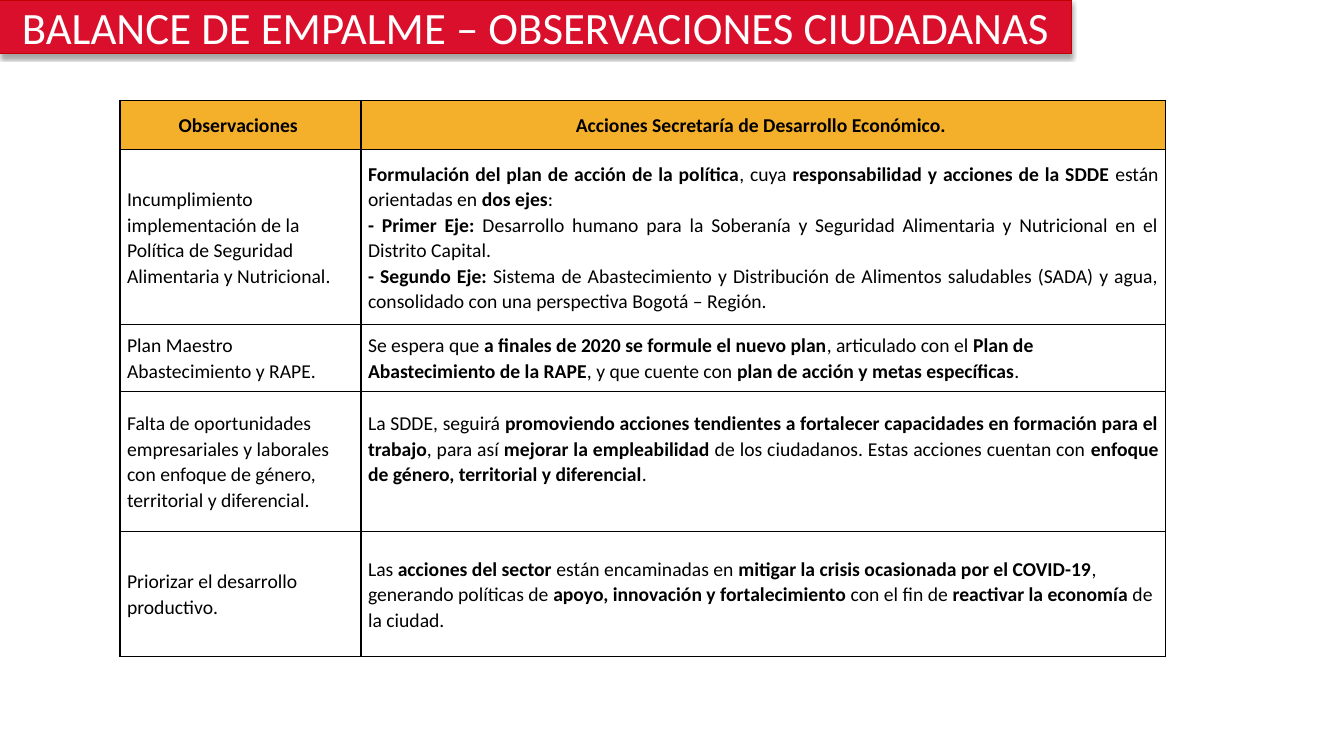
import pptx
import pptx.dml.color
import pptx.enum.shapes
import pptx.enum.text
import pptx.oxml
import pptx.util
from pptx.oxml.ns import nsdecls

COLORS = {"red": "DA0F2B", "dark_red": "C00000", "amber": "F5B02B",
          "black": "000000", "white": "FFFFFF"}
FONT = "Calibri"
WIDTH, HEIGHT = pptx.util.Inches(13.33), pptx.util.Inches(7.5)
LEFT = pptx.enum.text.PP_ALIGN.LEFT
CENTER = pptx.enum.text.PP_ALIGN.CENTER
JUSTIFY = pptx.enum.text.PP_ALIGN.JUSTIFY
MIDDLE = pptx.enum.text.MSO_ANCHOR.MIDDLE

COLUMN_WIDTHS = [2.39, 7.98]
ROW_HEIGHTS = [0.49, 1.74, 0.66, 1.39, 1.24]

# Each row: observation, alignment of the action, paragraphs of the action; ** toggles bold.
ROWS = [
    ("**Observaciones ", CENTER, ["**Acciones Secretaría de Desarrollo Económico. "]),
    ("Incumplimiento implementación de la Política de Seguridad Alimentaria y Nutricional.", JUSTIFY, [
        "**Formulación del plan de acción de la política**, cuya **responsabilidad y acciones "
        "de la SDDE **están orientadas en **dos ejes**:",
        "**- Primer Eje: **Desarrollo humano para la Soberanía y Seguridad Alimentaria y "
        "Nutricional en el Distrito Capital.",
        "**- Segundo Eje: **Sistema de Abastecimiento y Distribución de Alimentos saludables "
        "(SADA) y agua, consolidado con una perspectiva Bogotá – Región."]),
    ("Plan Maestro Abastecimiento y RAPE.", LEFT, [
        "Se espera que **a finales de 2020 se formule el nuevo plan**, articulado con el "
        "**Plan de Abastecimiento de la RAPE**, y que cuente con "
        "**plan de acción y metas específicas**."]),
    ("Falta de oportunidades empresariales y laborales con enfoque de género, "
     "territorial y diferencial.", JUSTIFY, [
        "La SDDE, seguirá **promoviendo acciones tendientes a fortalecer capacidades en "
        "formación para el trabajo**, para así **mejorar la empleabilidad** de los ciudadanos. "
        "Estas acciones cuentan con **enfoque de género, territorial y diferencial**. "]),
    ("Priorizar el desarrollo productivo.", LEFT, [
        "Las **acciones del sector **están encaminadas en **mitigar la crisis ocasionada por "
        "el COVID-19**, generando políticas de **apoyo, innovación y fortalecimiento **con el "
        "fin de **reactivar la economía **de la ciudad."]),
]


def rgb(name):
    return pptx.dml.color.RGBColor.from_string(COLORS[name])


def fill_cell(cell, texts, alignment):
    """Write the marked-up paragraphs and draw the four borders of the cell."""
    cell.vertical_anchor = MIDDLE
    cell.margin_left = cell.margin_right = pptx.util.Inches(0.07)
    cell.margin_top = cell.margin_bottom = 0
    for index, text in enumerate(texts):
        frame = cell.text_frame
        paragraph = frame.add_paragraph() if index else frame.paragraphs[0]
        paragraph.alignment = alignment
        paragraph.line_spacing = 1.07
        paragraph.font.name = FONT
        paragraph.font.size = pptx.util.Pt(14)
        paragraph.font.color.rgb = rgb("black")
        for part, words in enumerate(text.split("**")):
            if words:
                run = paragraph.add_run()
                run.text = words
                run.font.bold = part % 2 == 1
    for side in "LRTB":
        cell._tc.get_or_add_tcPr().append(pptx.oxml.parse_xml(
            f'<a:ln{side} {nsdecls("a")} w="12700"><a:solidFill>'
            f'<a:srgbClr val="{COLORS["black"]}"/></a:solidFill></a:ln{side}>'))


presentation = pptx.Presentation()
presentation.slide_width, presentation.slide_height = WIDTH, HEIGHT
slide = presentation.slides.add_slide(presentation.slide_layouts[6])

# Title band
band = slide.shapes.add_shape(pptx.enum.shapes.MSO_SHAPE.RECTANGLE,
                              0, 0, int(WIDTH * 0.7975), int(HEIGHT * 0.071))
band.fill.solid()
band.fill.fore_color.rgb = rgb("red")
band.line.color.rgb = rgb("dark_red")
band.line.width = pptx.util.Pt(0.75)
band.shadow.inherit = False
band._element.spPr.find(pptx.oxml.ns.qn("a:effectLst")).append(pptx.oxml.parse_xml(
    f'<a:outerShdw {nsdecls("a")} blurRad="40000" dist="23000" dir="5400000" rotWithShape="0">'
    f'<a:srgbClr val="{COLORS["black"]}"><a:alpha val="35000"/></a:srgbClr></a:outerShdw>'))
band.text_frame.word_wrap = True
band.text_frame.vertical_anchor = MIDDLE
title = band.text_frame.paragraphs[0]
title.text = "BALANCE DE EMPALME – OBSERVACIONES CIUDADANAS"
title.alignment = CENTER
title.font.name = FONT
title.font.size = pptx.util.Pt(32)
title.font.color.rgb = rgb("white")

# Table of observations and actions
table = slide.shapes.add_table(
    len(ROWS), len(COLUMN_WIDTHS), int(WIDTH * 0.0893), int(HEIGHT * 0.1325),
    pptx.util.Inches(sum(COLUMN_WIDTHS)), pptx.util.Inches(sum(ROW_HEIGHTS))).table
table.first_row = table.horz_banding = False
for column, width in zip(table.columns, COLUMN_WIDTHS):
    column.width = pptx.util.Inches(width)
for row, height, (observation, alignment, actions) in zip(table.rows, ROW_HEIGHTS, ROWS):
    row.height = pptx.util.Inches(height)
    is_header = alignment == CENTER
    observation_cell, action_cell = row.cells
    fill_cell(observation_cell, [observation], CENTER if is_header else LEFT)
    fill_cell(action_cell, actions, alignment)
    for cell in (observation_cell, action_cell):
        if is_header:
            cell.fill.solid()
            cell.fill.fore_color.rgb = rgb("amber")
        else:
            cell.fill.background()

# The training action sits half a line above the middle of its row
table.cell(3, 1).margin_bottom = pptx.util.Inches(0.25)

presentation.save("out.pptx")
